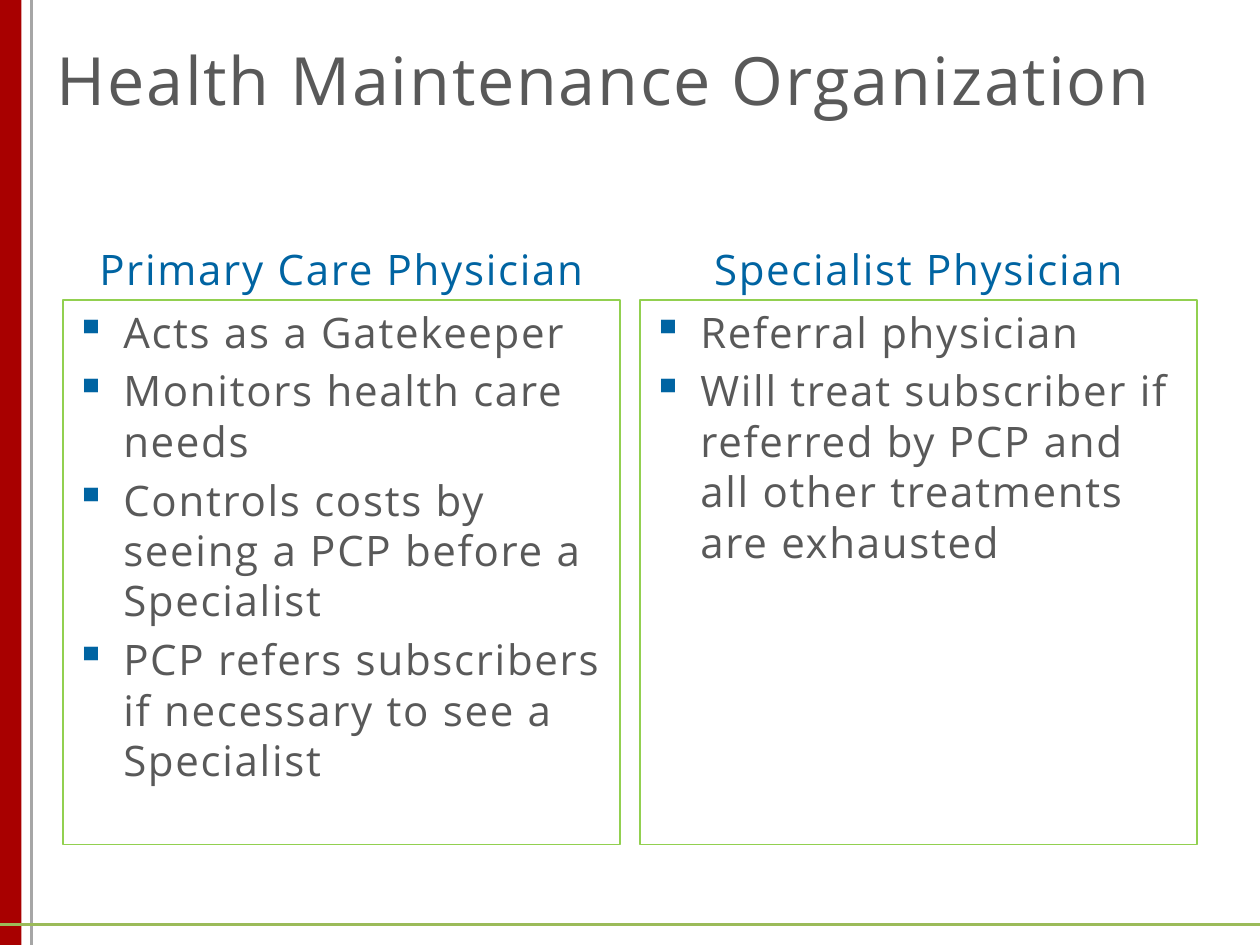
from lxml import etree
from pptx import Presentation
from pptx import util as u
from pptx.dml.color import RGBColor
from pptx.enum import shapes, text
from pptx.oxml.ns import qn

COLORS = {"red": "A80000", "gray": "A6A6A6", "olive": "9BBB59",
          "green": "92D050", "blue": "0064A2", "ink": "595959"}
FONT = "Open Sans"
WIDTH, HEIGHT = u.Inches(10), u.Inches(7.5)
BODY_SIZE = 24
INDENT = u.Inches(0.38)
COLUMNS = [
    ("Primary Care Physician",
     ["Acts as a Gatekeeper",
      "Monitors health care needs",
      "Controls costs by seeing a PCP before a Specialist",
      "PCP refers subscribers if necessary to see a Specialist"]),
    ("Specialist Physician",
     ["Referral physician",
      "Will treat subscriber if referred by PCP and all other treatments are exhausted"]),
]


def rgb(name):
    return RGBColor.from_string(COLORS[name])


def add_rule(page, start, end, color, weight):
    rule = page.shapes.add_connector(shapes.MSO_CONNECTOR.STRAIGHT, *start, *end)
    rule.line.color.rgb = rgb(color)
    rule.line.width = u.Pt(weight)
    etree.SubElement(rule._element.spPr, qn("a:effectLst"))


def add_bullet(para):
    props = para._p.get_or_add_pPr()
    props.set("marL", str(INDENT))
    props.set("indent", str(-INDENT))
    color = etree.SubElement(props, qn("a:buClr"))
    etree.SubElement(color, qn("a:srgbClr"), val=COLORS["blue"])
    etree.SubElement(props, qn("a:buChar"), char="▪")


def write(frame, lines, size, color, align=text.PP_ALIGN.LEFT, bullets=False):
    for index, line in enumerate(lines):
        para = frame.add_paragraph() if index else frame.paragraphs[0]
        if bullets:
            add_bullet(para)
        para.alignment = align
        if index:
            para.space_before = u.Pt(size * 0.2)
        span = para.add_run()
        span.text = line
        for key, value in {"name": FONT, "size": u.Pt(size)}.items():
            setattr(span.font, key, value)
        span.font.color.rgb = rgb(color)
        span._r.get_or_add_rPr().set("spc", "100")


def add_frame(page, box, **settings):
    """Add a wrapping text box and return it."""
    holder = page.shapes.add_textbox(*box)
    for key, value in {"word_wrap": True, **settings}.items():
        setattr(holder.text_frame, key, value)
    return holder


def draw_trim(page):
    """Draw the red edge, the gray rule beside it and the footer rule."""
    edge = page.shapes.add_shape(shapes.MSO_SHAPE.RECTANGLE, 0, 0, u.Inches(0.17), HEIGHT)
    edge.shadow.inherit = False
    edge.fill.solid()
    edge.fill.fore_color.rgb = rgb("red")
    edge.line.fill.background()
    margin, footer = WIDTH // 40, u.Inches(7.34)
    add_rule(page, (margin, 0), (margin, HEIGHT), "gray", 2.25)
    add_rule(page, (0, footer), (WIDTH, footer), "olive", 1.5)


def draw_title(page, box):
    holder = add_frame(page, box, margin_left=u.Inches(0.2),
                       vertical_anchor=text.MSO_ANCHOR.MIDDLE)
    write(holder.text_frame, ["Health Maintenance Organization"], 38, "ink")


def draw_column(page, box, heading, points):
    """Place a heading above a bordered list of points."""
    left, top, width, height = box
    heading_height = u.Inches(0.7)
    header = add_frame(page, (left, top, width, heading_height),
                       vertical_anchor=text.MSO_ANCHOR.BOTTOM)
    write(header.text_frame, [heading], BODY_SIZE, "blue", text.PP_ALIGN.CENTER)
    panel = add_frame(page, (left, top + heading_height, width, height - heading_height))
    panel.line.color.rgb = rgb("green")
    panel.line.width = u.Pt(0.75)
    write(panel.text_frame, points, BODY_SIZE, "ink", bullets=True)


def main():
    deck = Presentation()
    deck.slide_width, deck.slide_height = WIDTH, HEIGHT
    page = deck.slides.add_slide(deck.slide_layouts[6])
    draw_trim(page)
    draw_title(page, (WIDTH // 40, 0, WIDTH * 39 // 40, HEIGHT // 6))
    margin, gap = WIDTH // 20, u.Inches(0.16)
    column_width = (WIDTH - 2 * margin - gap) // 2
    for index, (heading, points) in enumerate(COLUMNS):
        left = margin + index * (column_width + gap)
        draw_column(page, (left, u.Inches(1.68), column_width, u.Inches(5.02)),
                    heading, points)
    deck.save("out.pptx")


if __name__ == "__main__":
    main()
